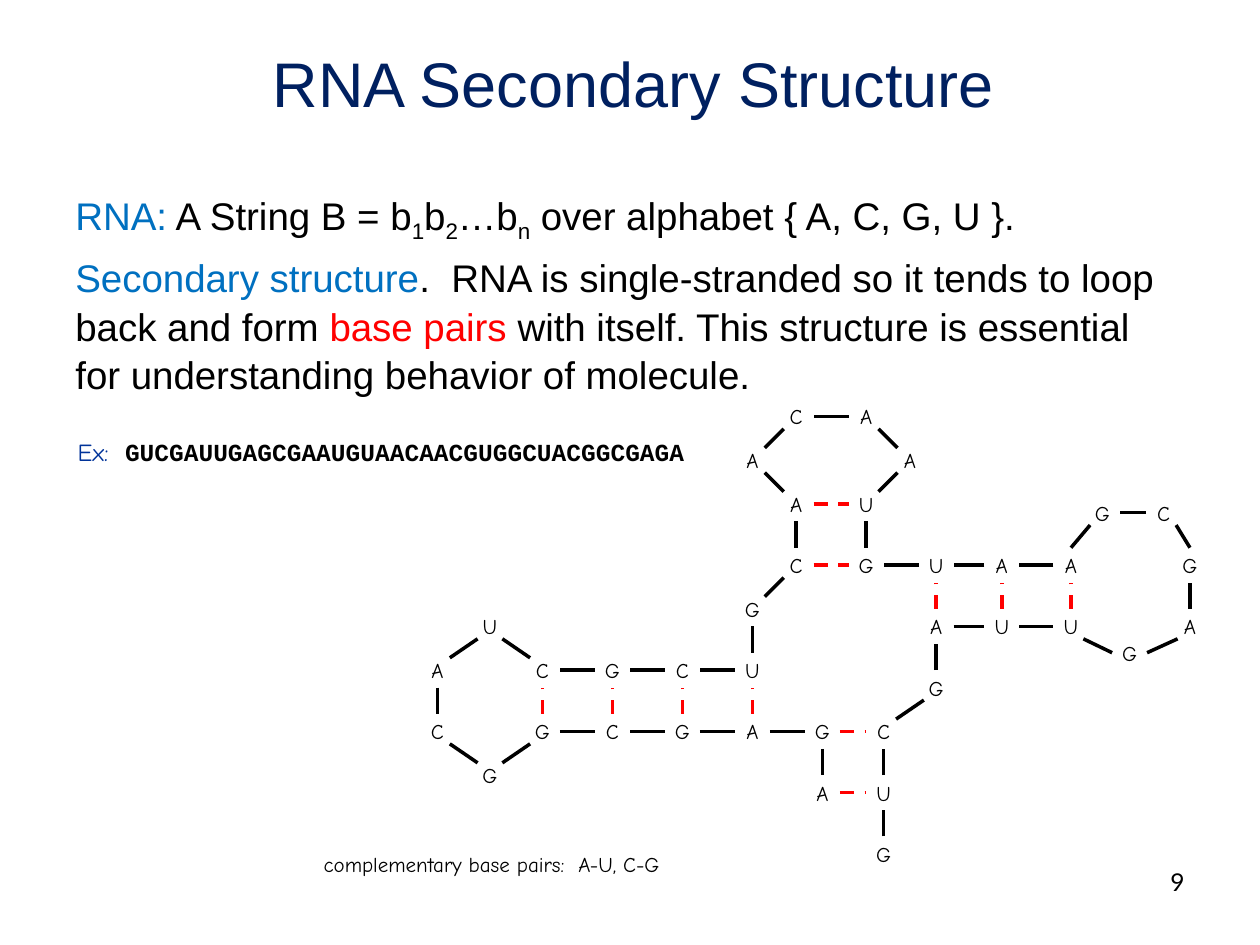
"""Build a slide that explains the secondary structure of RNA."""
from lxml import etree
from pptx import Presentation
from pptx.dml.color import RGBColor
from pptx.enum.dml import MSO_LINE
from pptx.enum.shapes import MSO_CONNECTOR, MSO_SHAPE
from pptx.enum.text import MSO_ANCHOR, PP_ALIGN
from pptx.oxml.ns import qn
from pptx.util import Pt

STRAIGHT = MSO_CONNECTOR.STRAIGHT
OVAL = MSO_SHAPE.OVAL
DASH = MSO_LINE.DASH
MIDDLE, TOP = MSO_ANCHOR.MIDDLE, MSO_ANCHOR.TOP
CENTER, LEFT, RIGHT = PP_ALIGN.CENTER, PP_ALIGN.LEFT, PP_ALIGN.RIGHT

BLACK = RGBColor(0x00, 0x00, 0x00)
RED = RGBColor(0xFF, 0x00, 0x00)
NAVY = RGBColor(0x00, 0x20, 0x60)
BLUE = RGBColor(0x00, 0x70, 0xC0)
LABEL_BLUE = RGBColor(0x00, 0x33, 0x99)

TITLE_FONT = {"name": "Arial", "size": Pt(36)}
BODY_FONT = {"name": "Arial", "size": Pt(22)}
NUMBER_FONT = {"name": "Lato", "size": Pt(14)}
LABEL_FONT = {"name": "Comic Neue", "size": Pt(14)}
SEQUENCE_FONT = {"name": "Courier New", "size": Pt(14), "bold": True}
SMALL_FONT = {"name": "Comic Neue", "size": Pt(12)}

RADIUS = 10
NUCLEOTIDES = [
    ("G", 505, 488), ("U", 505, 453), ("C", 505, 418), ("G", 535, 393),
    ("A", 535, 358), ("U", 572.5, 358), ("U", 612, 358), ("G", 645.5, 373),
    ("A", 680, 358), ("G", 680, 323), ("C", 665, 293), ("G", 630, 293),
    ("A", 612, 323), ("A", 572.5, 323), ("U", 535, 323), ("G", 495, 323),
    ("U", 495, 288), ("A", 520, 263), ("A", 495, 238), ("C", 455, 238),
    ("A", 430, 263), ("A", 455, 288), ("C", 455, 323), ("G", 430, 348),
    ("U", 430, 383), ("C", 390, 383), ("G", 350, 383), ("C", 310, 383),
    ("U", 280, 358), ("A", 250, 383), ("C", 250, 418), ("G", 280, 443),
    ("G", 310, 418), ("C", 350, 418), ("G", 390, 418), ("A", 430, 418),
    ("G", 470, 418), ("A", 470, 453),
]
BASE_PAIRS = [(37, 1), (36, 2), (4, 14), (5, 13), (6, 12), (21, 16),
              (22, 15), (35, 24), (34, 25), (33, 26), (32, 27)]


def add_run(paragraph, text, font_format, color, subscript=False):
    """Append a formatted run to a paragraph."""
    run = paragraph.add_run()
    run.text = text
    for name, value in font_format.items():
        setattr(run.font, name, value)
    run.font.color.rgb = color
    if subscript:
        run.font._element.set("baseline", "-25000")


def add_text(slide, box, paragraphs, alignment=LEFT, wrap=True, **paragraph_format):
    """Add a text box holding paragraphs, each a list of run arguments."""
    shape = slide.shapes.add_textbox(*map(Pt, box))
    frame = shape.text_frame
    frame.word_wrap = wrap
    frame.vertical_anchor = TOP
    for index, runs in enumerate(paragraphs):
        paragraph = frame.add_paragraph() if index else frame.paragraphs[0]
        paragraph.alignment = alignment
        for name, value in paragraph_format.items():
            setattr(paragraph, name, value)
        paragraph.space_before = Pt(4.4 if index else 0)
        for run in runs:
            add_run(paragraph, *run)


def add_nucleotide(slide, letter, x, y):
    """Add an unfilled circle with its letter, centred on a point."""
    shape = slide.shapes.add_shape(
        OVAL, Pt(x - RADIUS), Pt(y - RADIUS), Pt(2 * RADIUS), Pt(2 * RADIUS))
    shape.shadow.inherit = False
    shape.fill.background()
    shape.line.fill.background()
    frame = shape.text_frame
    frame.word_wrap = False
    frame.vertical_anchor = MIDDLE
    frame.paragraphs[0].alignment = CENTER
    add_run(frame.paragraphs[0], letter, SMALL_FONT, BLACK)


def rim_point(center, other):
    """Return the point on a circle's rim where a bond to another circle starts."""
    (x, y), (other_x, other_y) = center, other
    dx, dy = other_x - x, other_y - y
    short, long = sorted((abs(dx), abs(dy)))
    if short == 0 or (short < 0.7 * long and y > other_y):
        if abs(dx) > abs(dy):
            return x + RADIUS * dx / abs(dx), y
        return x, y + RADIUS * dy / abs(dy)
    offset = RADIUS * 0.5 ** 0.5
    return x + offset * dx / abs(dx), y + offset * dy / abs(dy)


def add_bond(slide, first, second, color, dash=None):
    """Draw a bond between the rims of two nucleotides."""
    start, end = first[1:], second[1:]
    points = (*rim_point(start, end), *rim_point(end, start))
    connector = slide.shapes.add_connector(STRAIGHT, *map(Pt, points))
    etree.SubElement(connector._element.spPr, qn("a:effectLst"))
    connector.line.color.rgb = color
    connector.line.width = Pt(2)
    if dash:
        connector.line.dash_style = dash


def add_molecule(slide):
    """Draw the folded strand with its backbone and base pairs."""
    for nucleotide in NUCLEOTIDES:
        add_nucleotide(slide, *nucleotide)
    for first, second in zip(NUCLEOTIDES, NUCLEOTIDES[1:]):
        add_bond(slide, first, second, BLACK)
    for first, second in BASE_PAIRS:
        add_bond(slide, NUCLEOTIDES[first], NUCLEOTIDES[second], RED, DASH)


def main():
    """Create the presentation and save it."""
    presentation = Presentation()
    presentation.slide_width, presentation.slide_height = Pt(720), Pt(540)
    slide = presentation.slides.add_slide(presentation.slide_layouts[6])
    add_text(slide, (20, 22, 684, 90),
             [[("RNA Secondary Structure", TITLE_FONT, NAVY)]], CENTER)
    add_text(slide, (36, 104.5, 648, 378), [
        [("RNA:", BODY_FONT, BLUE),
         (" A String B = b", BODY_FONT, BLACK),
         ("1", BODY_FONT, BLACK, True),
         ("b", BODY_FONT, BLACK),
         ("2", BODY_FONT, BLACK, True),
         ("…b", BODY_FONT, BLACK),
         ("n", BODY_FONT, BLACK, True),
         (" over alphabet { A, C, G, U }.", BODY_FONT, BLACK)],
        [("Secondary structure", BODY_FONT, BLUE),
         (".  RNA is single-stranded so it tends to loop back and form ",
          BODY_FONT, BLACK),
         ("base pairs ", BODY_FONT, RED),
         ("with itself. This structure is essential for understanding "
          "behavior of molecule.", BODY_FONT, BLACK)],
    ], line_spacing=1.05)
    add_text(slide, (516, 492, 168, 37), [[("9", NUMBER_FONT, BLACK)]], RIGHT)
    add_molecule(slide)
    add_text(slide, (36, 237, 364, 33), [
        [("Ex:  ", LABEL_FONT, LABEL_BLUE),
         ("GUCGAUUGAGCGAAUGUAACAACGUGGCUACGGCGAGA", SEQUENCE_FONT, BLACK)],
    ], CENTER, False, line_spacing=Pt(26))
    add_text(slide, (171, 483, 220, 22),
             [[("complementary base pairs:  A-U, C-G", SMALL_FONT, BLACK)]],
             CENTER, False)
    presentation.save("out.pptx")


if __name__ == "__main__":
    main()
